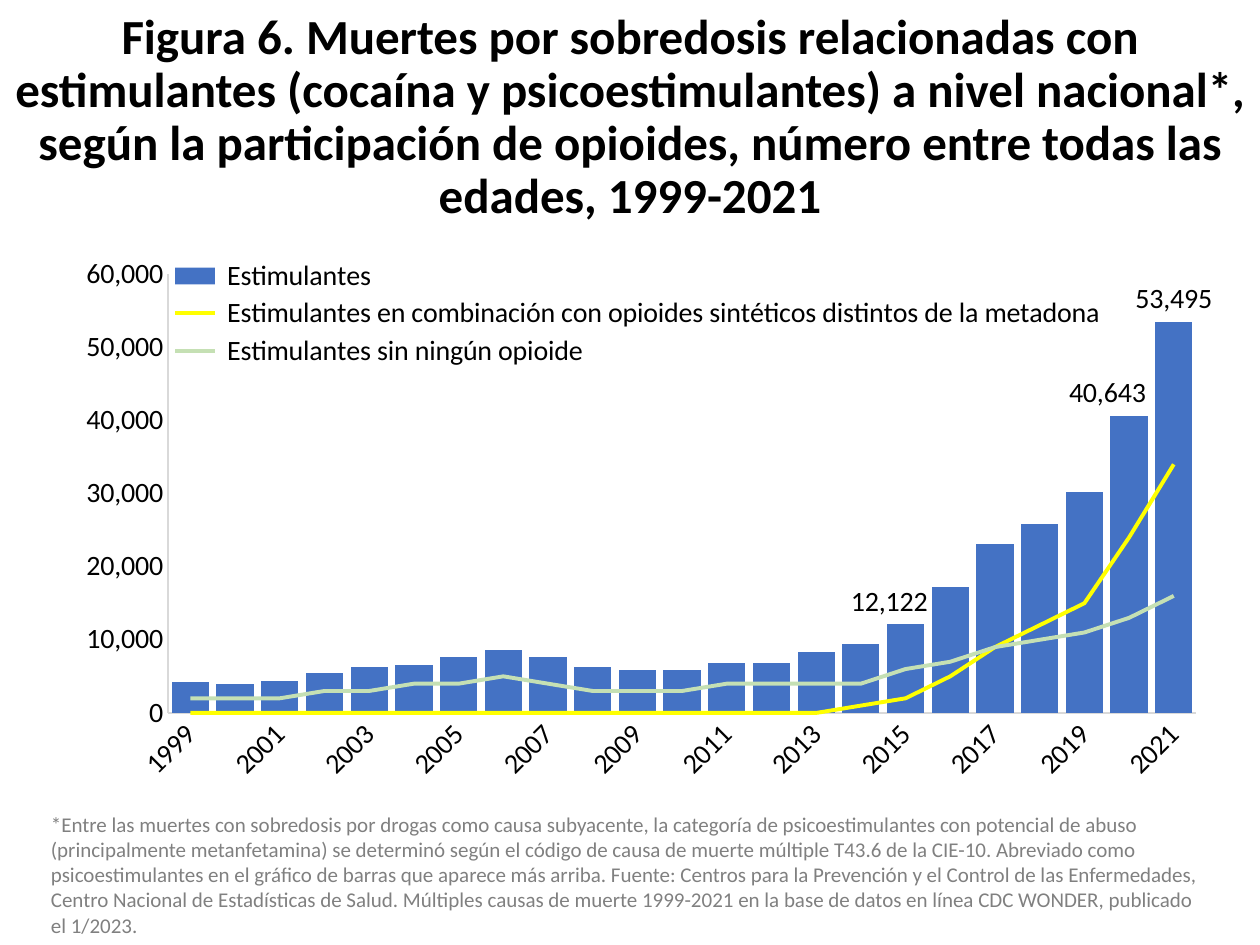
from lxml.etree import SubElement
from pptx import Presentation
from pptx.chart.data import CategoryChartData
from pptx.dml.color import RGBColor
from pptx.enum.chart import (XL_CHART_TYPE as ChartType, XL_LABEL_POSITION as LabelPos,
                             XL_LEGEND_POSITION as LegendPos, XL_MARKER_STYLE as Marker,
                             XL_TICK_MARK as TickMark)
from pptx.enum.text import MSO_ANCHOR, MSO_AUTO_SIZE as AutoSize, PP_ALIGN
from pptx.oxml import parse_xml
from pptx.oxml.ns import qn
from pptx.util import Pt

FONT = "Calibri"
COLORS = {"text": "000000", "note": "808080", "axis": "D9D9D9",
          "stimulants": "4472C4", "synthetic": "FFFF00", "no_opioid": "C5E0B4"}

TITLE = ("Figura 6. Muertes por sobredosis relacionadas con estimulantes (cocaína y "
         "psicoestimulantes) a nivel nacional*, según la participación de opioides, "
         "número entre todas las edades, 1999-2021")
FOOTNOTE = ("*Entre las muertes con sobredosis por drogas como causa subyacente, la categoría "
            "de psicoestimulantes con potencial de abuso (principalmente metanfetamina) se "
            "determinó según el código de causa de muerte múltiple T43.6 de la CIE-10. "
            "Abreviado como psicoestimulantes en el gráfico de barras que aparece más arriba. "
            "Fuente: Centros para la Prevención y el Control de las Enfermedades, Centro "
            "Nacional de Estadísticas de Salud. Múltiples causas de muerte 1999-2021 en la "
            "base de datos en línea CDC WONDER, publicado el 1/2023.")

YEARS = range(1999, 2022)
DEATHS = {
    " Estimulantes":
        [4271, 4017, 4308, 5423, 6215, 6591, 7606, 8668, 7697, 6320, 5824, 5914, 6765,
         6879, 8338, 9395, 12122, 17258, 23139, 25877, 30231, 40643, 53495],
    " Estimulantes en combinación con opioides sintéticos distintos de la metadona":
        [0] * 15 + [1000, 2000, 5000, 9000, 12000, 15000, 24000, 34000],
    " Estimulantes sin ningún opioide":
        [2000, 2000, 2000, 3000, 3000, 4000, 4000, 5000, 4000, 3000, 3000, 3000, 4000,
         4000, 4000, 4000, 6000, 7000, 9000, 10000, 11000, 13000, 16000],
}
CHART_WIDTH = 676.1
# Labelled year -> sideways shift in points
LABEL_SHIFTS = {2015: -9.3, 2020: -12.4, 2021: 0}


def rgb(name):
    return RGBColor.from_string(COLORS[name])


def style_font(font, size, color="text", bold=False):
    font.name, font.size, font.bold = FONT, Pt(size), bold
    font.color.rgb = rgb(color)


def add_child(parent, tag, value=None):
    child = SubElement(parent, qn(tag))
    if value is not None:
        child.set("val", str(value))
    return child


def set_layout(parent, index, **settings):
    """Give a chart part a manual layout, as the child at the given index."""
    for old in parent.findall(qn("c:layout")):
        parent.remove(old)
    layout = add_child(parent, "c:layout")
    manual = add_child(layout, "c:manualLayout")
    for key, value in settings.items():
        add_child(manual, f"c:{key}", value)
    parent.insert(index, layout)


def add_title(slide):
    title = slide.shapes.title
    title.left, title.top, title.width, title.height = 0, 0, Pt(720), Pt(134.6)
    frame = title.text_frame
    frame.text = TITLE
    frame.auto_size = AutoSize.NONE
    frame.vertical_anchor = MSO_ANCHOR.MIDDLE
    heading = frame.paragraphs[0]
    heading.alignment, heading.line_spacing = PP_ALIGN.CENTER, 0.9
    style_font(heading.font, 28, bold=True)


def add_footnote(slide):
    frame = slide.shapes.add_textbox(Pt(22), Pt(460.1), Pt(676.1), Pt(79.9)).text_frame
    frame.word_wrap = True
    frame.text = FOOTNOTE
    style_font(frame.paragraphs[0].font, 12, "note")


def move_to_lines(chart, first):
    """Draw the series from position first onwards as lines on the same axes."""
    bars = chart.plots[0]._element
    lines = parse_xml('<c:lineChart xmlns:c="http://schemas.openxmlformats.org/'
                      'drawingml/2006/chart"/>')
    add_child(lines, "c:grouping", "standard")
    add_child(lines, "c:varyColors", 0)
    for series in bars.findall(qn("c:ser"))[first:]:
        for flag in series.findall(qn("c:invertIfNegative")):
            series.remove(flag)
        lines.append(series)
    add_child(lines, "c:marker", 1)
    for axis in bars.findall(qn("c:axId")):
        add_child(lines, "c:axId", axis.get("val"))
    bars.addnext(lines)


def style_axis(axis):
    axis.major_tick_mark = axis.minor_tick_mark = TickMark.NONE
    axis.has_major_gridlines = False
    axis.format.line.width = Pt(0.75)
    axis.format.line.color.rgb = rgb("axis")
    style_font(axis.tick_labels.font, 16)


def style_axes(chart):
    years, deaths = chart.category_axis, chart.value_axis
    for axis in (years, deaths):
        style_axis(axis)
    deaths.minimum_scale, deaths.maximum_scale, deaths.major_unit = 0, 60000, 10000
    deaths.tick_labels.number_format = "#,##0"
    deaths.tick_labels.number_format_is_linked = False
    # Every second year, slanted
    years_xml = years._element
    years_xml.find(f"{qn('c:txPr')}/{qn('a:bodyPr')}").set("rot", str(-45 * 60000))
    skip = add_child(years_xml, "c:tickLblSkip", 2)
    years_xml.find(qn("c:noMultiLvlLbl")).addprevious(skip)


def style_bars(plot):
    plot.gap_width, plot.overlap, plot.vary_by_categories = 20, -1, False
    stimulants = plot.series[0]
    stimulants.format.fill.solid()
    stimulants.format.fill.fore_color.rgb = rgb("stimulants")
    stimulants.data_labels.show_value = False
    for year, shift in LABEL_SHIFTS.items():
        label = stimulants.points[year - YEARS[0]].data_label
        style_font(label.font, 16)
        label.position = LabelPos.OUTSIDE_END
        if shift:
            label_xml = label._get_or_add_dLbl()
            set_layout(label_xml, 1, x=shift / CHART_WIDTH, y=0)


def style_lines(plot):
    for series, color in zip(plot.series, ("synthetic", "no_opioid")):
        series.format.line.width = Pt(2.25)
        series.format.line.color.rgb = rgb(color)
        series.marker.style = Marker.NONE
        series.smooth = False


def add_legend(chart):
    chart.has_legend = True
    legend = chart.legend
    legend.position = LegendPos.BOTTOM
    legend.include_in_layout = False
    style_font(legend.font, 16)
    set_layout(legend._element, 1, xMode="edge", yMode="edge", x=0.1, y=0, w=0.8, h=0.21)


def add_deaths_chart(slide):
    data = CategoryChartData(number_format="#,##0")
    data.categories = [str(year) for year in YEARS]
    for name, values in DEATHS.items():
        data.add_series(name, values)
    chart = slide.shapes.add_chart(ChartType.COLUMN_CLUSTERED, Pt(26.4), Pt(146),
                                   Pt(CHART_WIDTH), Pt(315.4), data).chart
    chart.has_title = False
    style_font(chart.font, 16)
    move_to_lines(chart, 1)
    bars, lines = chart.plots
    style_bars(bars)
    style_lines(lines)
    style_axes(chart)
    add_legend(chart)
    set_layout(bars._element.getparent(), 0, layoutTarget="inner", xMode="edge",
               yMode="edge", x=0.103, y=0.034, w=0.869, h=0.795)


def main():
    deck = Presentation()
    deck.slide_width, deck.slide_height = Pt(720), Pt(540)
    slide = deck.slides.add_slide(deck.slide_layouts[5])  # Title Only
    add_title(slide)
    add_footnote(slide)
    add_deaths_chart(slide)
    deck.save("out.pptx")


if __name__ == "__main__":
    main()
